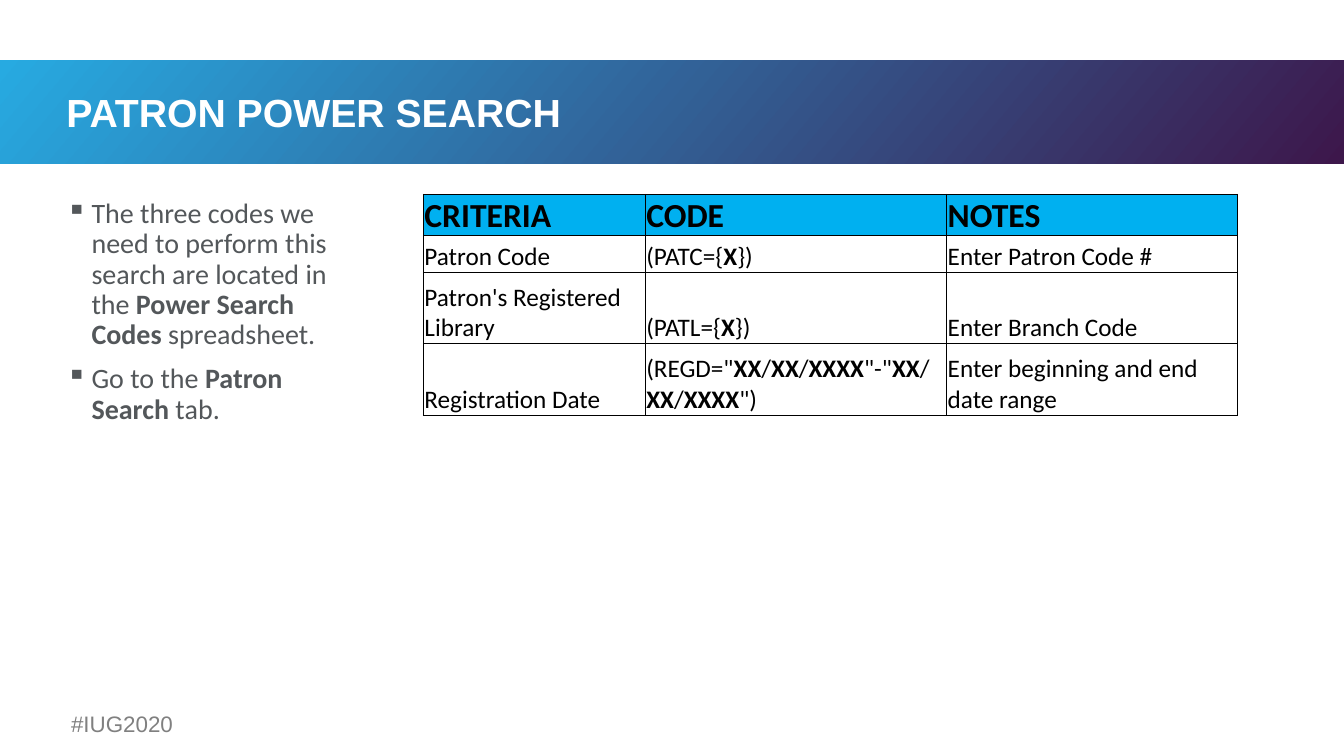
from pptx import Presentation
from pptx.dml.color import RGBColor
from pptx.enum.shapes import MSO_SHAPE
from pptx.enum.text import MSO_ANCHOR, PP_ALIGN
from pptx.oxml.ns import qn
from pptx.util import Inches, Pt
from lxml.etree import SubElement

RECTANGLE = MSO_SHAPE.RECTANGLE
TOP, MIDDLE, BOTTOM = MSO_ANCHOR.TOP, MSO_ANCHOR.MIDDLE, MSO_ANCHOR.BOTTOM
LEFT, CENTER = PP_ALIGN.LEFT, PP_ALIGN.CENTER

THEME = {
    "banner": ("27AAE1", "3D174B"),
    "header_fill": "00B0F0",
    "border": "000000",
    "title": {"name": "Arial", "size": 28, "color": "FFFFFF", "bold": True},
    "body": {"name": "Calibri", "size": 20, "color": "53575A", "bold": False},
    "header": {"name": "Calibri", "size": 24, "color": "000000", "bold": True},
    "cell": {"name": "Calibri", "size": 18, "color": "000000", "bold": False},
    "footer": {"name": "Arial", "size": 16, "color": "808080", "bold": False},
}

WIDTH, HEIGHT = 13.33, 7.5
MARGIN = 0.56
CONTENT_TOP = 1.93
TABLE_LEFT = 4.2
COLUMNS = (2.2, 2.99, 2.88)
ROWS = (0.41, 0.36, 0.71, 0.71)


def write_marked(para, text, style):
    """Fill a paragraph, switching bold on and off at each ** mark."""
    for index, part in enumerate(text.split("**")):
        if not part:
            continue
        span = para.add_run()
        span.text = part
        values = {"name": style["name"], "size": Pt(style["size"]),
                  "bold": style["bold"] or index % 2 == 1}
        for name, value in values.items():
            setattr(span.font, name, value)
        span.font.color.rgb = RGBColor.from_string(style["color"])


deck = Presentation()
deck.slide_width, deck.slide_height = Inches(WIDTH), Inches(HEIGHT)
page = deck.slides.add_slide(deck.slide_layouts[6])

# Banner
banner = page.shapes.add_shape(RECTANGLE, 0, Inches(0.6), deck.slide_width, Inches(1.02))
banner.shadow.inherit = False
banner.line.fill.background()
banner.fill.gradient()
banner.fill.gradient_angle = 320
for stop, color, position in zip(banner.fill.gradient_stops, THEME["banner"], (0, 1)):
    stop.color.rgb = RGBColor.from_string(color)
    stop.position = position

# Title, bullet list and footer
text_boxes = [
    {"area": (MARGIN, 0.74, 12.12, 0.8), "style": "title", "anchor": MIDDLE,
     "align": LEFT, "spacing": 0.9, "bullet": None, "lines": ["PATRON POWER SEARCH"]},
    {"area": (MARGIN, CONTENT_TOP, 3.03, 4.83), "style": "body", "anchor": TOP,
     "align": LEFT, "spacing": 0.9, "bullet": "▪",
     "lines": ["The three codes we need to perform this search are located in the "
               "**Power Search Codes **spreadsheet.",
               "Go to the **Patron Search** tab."]},
    {"area": (0, 7, 2.42, 0.37), "style": "footer", "anchor": TOP,
     "align": CENTER, "spacing": 1.0, "bullet": None, "lines": ["#IUG2020"]},
]
for item in text_boxes:
    box = page.shapes.add_textbox(*map(Inches, item["area"]))
    frame = box.text_frame
    frame.word_wrap = True
    frame.vertical_anchor = item["anchor"]
    for index, line in enumerate(item["lines"]):
        para = frame.add_paragraph() if index else frame.paragraphs[0]
        para.alignment = item["align"]
        para.line_spacing = item["spacing"]
        if index:
            para.space_before = Pt(10)
        if item["bullet"]:
            properties = para._p.get_or_add_pPr()
            properties.set("marL", str(Inches(0.25)))
            properties.set("indent", str(-Inches(0.25)))
            SubElement(properties, qn("a:buChar"), char=item["bullet"])
        write_marked(para, line, THEME[item["style"]])

# Search code table
records = [
    ("CRITERIA", "CODE", "NOTES"),
    ("Patron Code", "(PATC={**X**})", "Enter Patron Code #"),
    ("Patron's Registered Library", "(PATL={**X**})", "Enter Branch Code"),
    ("Registration Date",
     '(REGD="**XX**/**XX**/**XXXX**"-"**XX**/**XX**/**XXXX**")',
     "Enter beginning and end date range"),
]
table = page.shapes.add_table(
    len(ROWS), len(COLUMNS), Inches(TABLE_LEFT), Inches(CONTENT_TOP),
    Inches(sum(COLUMNS)), Inches(sum(ROWS))).table
table.first_row = table.horz_banding = False
for column, width in zip(table.columns, COLUMNS):
    column.width = Inches(width)
for row, height in zip(table.rows, ROWS):
    row.height = Inches(height)

cell_format = {"vertical_anchor": BOTTOM, "margin_left": Inches(0.01),
               "margin_right": Inches(0.01), "margin_top": Inches(0.01),
               "margin_bottom": 0}
for row_index, record in enumerate(records):
    for column_index, text in enumerate(record):
        cell = table.cell(row_index, column_index)
        for name, value in cell_format.items():
            setattr(cell, name, value)
        properties = cell._tc.get_or_add_tcPr()
        for side in ("a:lnL", "a:lnR", "a:lnT", "a:lnB"):
            border = SubElement(properties, qn(side), w=str(Pt(1)))
            border_fill = SubElement(border, qn("a:solidFill"))
            SubElement(border_fill, qn("a:srgbClr"), val=THEME["border"])
        if row_index == 0:
            cell.fill.solid()
            cell.fill.fore_color.rgb = RGBColor.from_string(THEME["header_fill"])
        else:
            cell.fill.background()
        style = THEME["cell" if row_index else "header"]
        write_marked(cell.text_frame.paragraphs[0], text, style)

deck.save("out.pptx")
